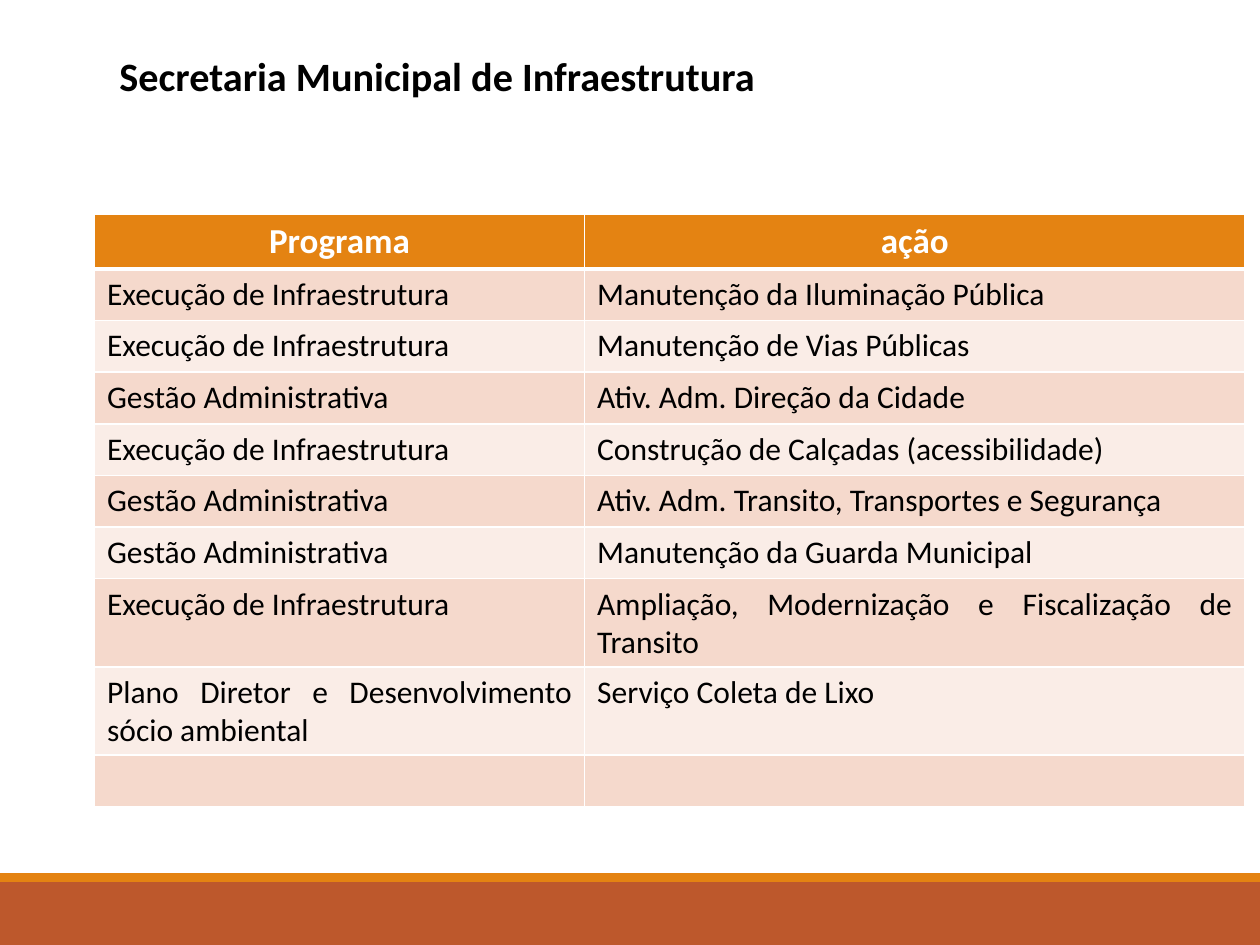
from dataclasses import dataclass

from lxml.etree import SubElement
from pptx import Presentation
from pptx.dml.color import RGBColor
from pptx.enum.shapes import MSO_SHAPE as Shape
from pptx.enum.text import MSO_AUTO_SIZE as AutoSize, PP_ALIGN as Align
from pptx.oxml.ns import qn
from pptx.util import Inches, Pt

ORANGE = RGBColor(0xE4, 0x83, 0x12)
RUST = RGBColor(0xBD, 0x58, 0x2C)
DARK_BAND = RGBColor(0xF5, 0xD9, 0xCC)
LIGHT_BAND = RGBColor(0xFA, 0xED, 0xE7)
WHITE = RGBColor(0xFF, 0xFF, 0xFF)
BLACK = RGBColor(0, 0, 0)

TITLE_FORMAT = {"name": "Calibri", "size": Pt(23), "bold": True}
HEADER_FORMAT = {"name": "Calibri", "size": Pt(20), "bold": True}
BODY_FORMAT = {"name": "Calibri", "size": Pt(18), "bold": False}


@dataclass
class Bar:
    top: float
    height: float
    color: RGBColor


@dataclass
class Action:
    program: str
    action: str
    height: float = 0.41
    program_align: Align = Align.LEFT


FOOTER_BARS = [Bar(7, 0.5, RUST), Bar(6.93, 0.07, ORANGE)]
HEADER = ("Programa", "ação")
COLUMN_WIDTHS = (3.89, 5.24)
ROW_HEIGHT = 0.41
EXECUTION = "Execução de Infraestrutura"
MANAGEMENT = "Gestão Administrativa"
ACTIONS = [
    Action(EXECUTION, "Manutenção da Iluminação Pública"),
    Action(EXECUTION, "Manutenção de Vias Públicas"),
    Action(MANAGEMENT, "Ativ. Adm. Direção da Cidade"),
    Action(EXECUTION, "Construção de Calçadas (acessibilidade)"),
    Action(MANAGEMENT, "Ativ. Adm. Transito, Transportes e Segurança"),
    Action(MANAGEMENT, "Manutenção da Guarda Municipal"),
    Action(EXECUTION, "Ampliação, Modernização e Fiscalização de Transito", 0.7),
    Action("Plano Diretor e Desenvolvimento sócio ambiental",
           "Serviço Coleta de Lixo", 0.7, Align.JUSTIFY),
    Action("", ""),
]


def write_text(paragraph, text: str, font_format: dict, color: RGBColor, align: Align) -> None:
    paragraph.alignment = align
    if not text:
        return
    run = paragraph.add_run()
    run.text = text
    for name, value in font_format.items():
        setattr(run.font, name, value)
    run.font.color.rgb = color


def set_borders(cell, top: float, bottom: float) -> None:
    properties = cell._tc.get_or_add_tcPr()
    for tag, width in {"lnL": 1, "lnR": 1, "lnT": top, "lnB": bottom}.items():
        line = SubElement(properties, qn(f"a:{tag}"), w=str(Pt(width)))
        fill = SubElement(line, qn("a:solidFill"))
        SubElement(fill, qn("a:srgbClr"), val=str(WHITE))


def draw_bar(slide, bar: Bar) -> None:
    shape = slide.shapes.add_shape(
        Shape.RECTANGLE, 0, Inches(bar.top), Inches(10), Inches(bar.height))
    shape.shadow.inherit = False
    shape.fill.solid()
    shape.fill.fore_color.rgb = bar.color
    shape.line.fill.background()


def draw_title(slide, text: str) -> None:
    frame = slide.shapes.add_textbox(
        Inches(0.85), Inches(0.36), Inches(8.44), Inches(0.49)).text_frame
    frame.word_wrap = True
    frame.auto_size = AutoSize.SHAPE_TO_FIT_TEXT
    write_text(frame.paragraphs[0], text, TITLE_FORMAT, BLACK, Align.LEFT)


def fill_cell(cell, color: RGBColor, top: float, bottom: float) -> None:
    set_borders(cell, top, bottom)
    cell.fill.solid()
    cell.fill.fore_color.rgb = color


def draw_table(slide, actions: list[Action]) -> None:
    heights = [ROW_HEIGHT] + [action.height for action in actions]
    table = slide.shapes.add_table(
        len(heights), len(COLUMN_WIDTHS), Inches(0.75), Inches(1.7),
        Inches(sum(COLUMN_WIDTHS)), Inches(sum(heights))).table
    for column, width in zip(table.columns, COLUMN_WIDTHS):
        column.width = Inches(width)
    for row, height in zip(table.rows, heights):
        row.height = Inches(height)

    # Header row, with a thick line below
    for cell, text in zip(table.rows[0].cells, HEADER):
        fill_cell(cell, ORANGE, 1, 3)
        write_text(cell.text_frame.paragraphs[0], text, HEADER_FORMAT, WHITE, Align.CENTER)

    # Banded body rows
    for index, action in enumerate(actions):
        band = LIGHT_BAND if index % 2 else DARK_BAND
        contents = ((action.program, action.program_align), (action.action, Align.JUSTIFY))
        for cell, (text, align) in zip(table.rows[index + 1].cells, contents):
            fill_cell(cell, band, 1 if index else 3, 1)
            write_text(cell.text_frame.paragraphs[0], text, BODY_FORMAT, BLACK, align)


def main() -> None:
    presentation = Presentation()
    presentation.slide_width, presentation.slide_height = Inches(10), Inches(7.5)
    slide = presentation.slides.add_slide(presentation.slide_layouts[6])
    for bar in FOOTER_BARS:
        draw_bar(slide, bar)
    draw_title(slide, "Secretaria Municipal de Infraestrutura")
    draw_table(slide, ACTIONS)
    presentation.save("out.pptx")


if __name__ == "__main__":
    main()
